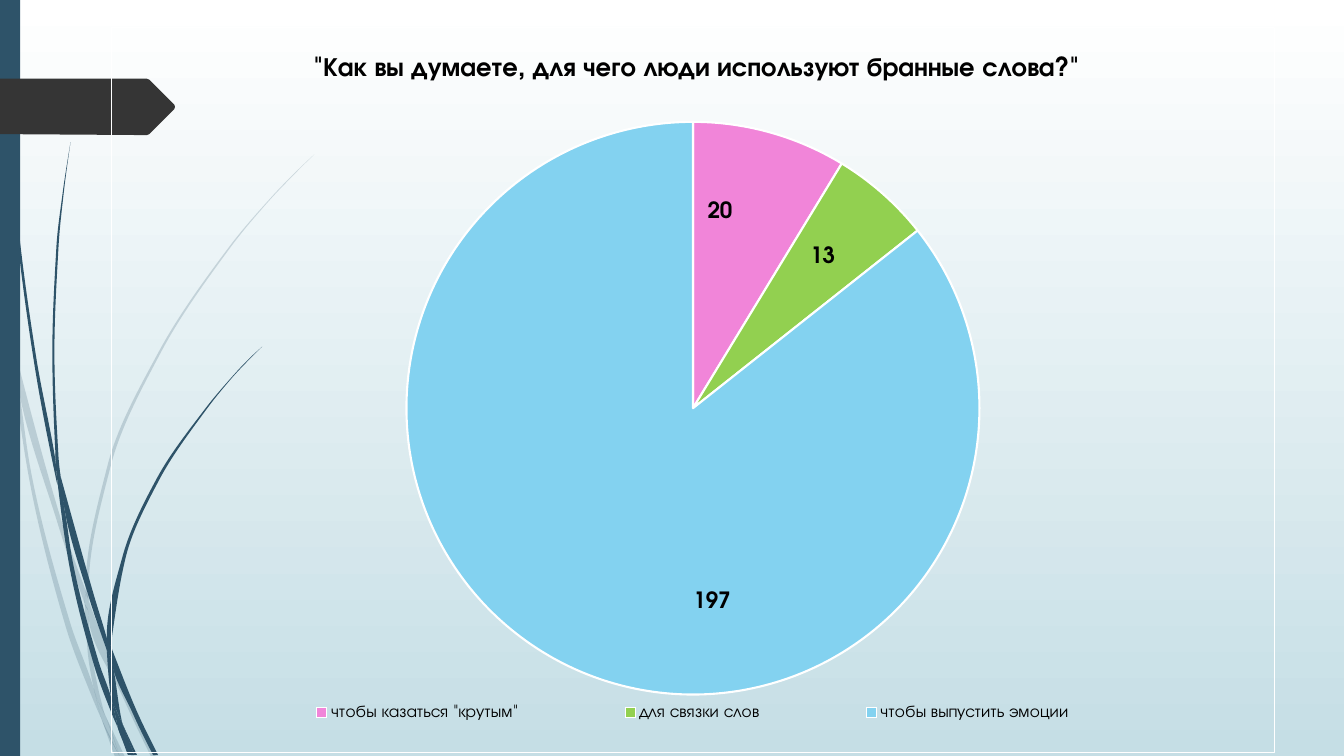
from dataclasses import dataclass
from typing import Optional

from lxml.etree import SubElement
from pptx import Presentation
from pptx.chart.data import CategoryChartData
from pptx.dml.color import RGBColor
from pptx.enum.chart import XL_CHART_TYPE, XL_LABEL_POSITION, XL_LEGEND_POSITION
from pptx.enum.shapes import MSO_SHAPE
from pptx.oxml import parse_xml
from pptx.oxml.ns import nsdecls, qn
from pptx.util import Pt

Spot = tuple[float, float]


@dataclass(frozen=True)
class Theme:
    font: str = "TeX Gyre Adventor"
    ink: str = "000000"
    white: str = "FFFFFF"
    mist: str = "C5DEE5"
    navy: str = "2E5369"
    dark: str = "353535"
    title: float = 18.8
    label: float = 16
    legend: float = 12
    base: float = 10


@dataclass(frozen=True)
class Blade:
    """A piece of grass: its right and left edges, each from top to bottom."""
    right: list[Spot]
    left: list[Spot]


@dataclass(frozen=True)
class Slice:
    name: str
    value: int
    color: str
    shift: Spot


THEME = Theme()
FADED = [
    Blade([(0, 203), (6.5, 231.8), (7.9, 252)], [(0, 215.3), (7.2, 247.7), (7.9, 252)]),
    Blade([(10.1, 248.4), (44.6, 374.4), (61.2, 421.9)],
          [(10.1, 248.4), (12.2, 270.7), (41.8, 375.8), (60.5, 431.3)]),
    Blade([(63.4, 429.1), (66.2, 437), (91.4, 498.2), (111.6, 540.7)],
          [(63.4, 429.1), (63.4, 439.2), (88.6, 499.7), (108, 540.7)]),
    Blade([(75.6, 511.9), (89.3, 540.7)], [(75.6, 511.9), (85.7, 540.7)]),
    Blade([(7.9, 252), (12.2, 270.7), (22.3, 337.7), (50.4, 445.7), (67, 491.8), (71.3, 509), (72.7, 514.1)],
          [(7.9, 252), (20.2, 338.4), (46.8, 447.1), (66.2, 499), (72.7, 514.1)]),
    Blade([(60.5, 431.3), (63.4, 437.8), (63.4, 439.2), (65.5, 465.1), (74.2, 508.3), (75.6, 511.9)],
          [(60.5, 431.3), (62.6, 465.1), (67, 491.8), (69.1, 498.2), (75.6, 511.9)]),
    Blade([(224.6, 110.2), (208.8, 126), (193, 142.6), (164.9, 176.4), (115.2, 251.3), (79.2, 332.6),
           (63.4, 420.5), (63.4, 429.1)],
          [(224.6, 110.2), (208.1, 126), (193, 141.8), (164.2, 175.7), (113.8, 250.6), (77, 331.9),
           (61.2, 420.5), (61.2, 421.9), (63.4, 429.1)]),
    Blade([(72.7, 514.1), (85.7, 540.7)], [(72.7, 514.1), (82.1, 540.7)]),
    Blade([(61.2, 421.9), (63.4, 429.1), (63.4, 439.2)],
          [(61.2, 421.9), (60.5, 431.3), (63.4, 437.8), (63.4, 439.2)]),
    Blade([(67, 491.8), (69.1, 498.2), (75.6, 511.9), (85.7, 540.7)],
          [(67, 491.8), (71.3, 509), (72.7, 514.1), (85.7, 540.7)]),
]
SOLID = [
    Blade([(2.9, 0), (3.6, 34.6), (5.8, 78.5), (13.7, 167), (25.9, 255.6), (39.2, 326.2), (39.6, 329), (41, 346.3)],
          [(2.2, 0), (2.9, 34.6), (5, 79.2), (12.2, 167.8), (23.8, 255.6), (40.3, 343.4), (41, 346.3)]),
    Blade([(43.2, 339.8), (67, 424.8), (75.9, 454.3), (76.3, 455.8), (76.3, 464.4)],
          [(43.2, 339.8), (46.1, 363.6), (63.4, 426.2), (76.3, 464.4)]),
    Blade([(79.2, 461.5), (81.4, 467.3), (97.9, 508.3), (113, 539.3)],
          [(79.2, 461.5), (79.9, 472.3), (95, 509.8), (109.4, 539.3)]),
    Blade([(41, 343.4), (46.1, 363.6), (51.8, 400.3), (70.6, 473), (79.2, 497.5), (83.5, 516.2), (84.2, 519.8)],
          [(41, 343.4), (49, 401), (67, 474.5), (79.9, 509.8), (84.2, 519.8)]),
    Blade([(50.4, 101.5), (45.4, 139), (41.8, 176.4), (38.9, 251.3), (41.8, 326.2), (43.2, 339.8)],
          [(50.4, 101.5), (44.6, 139), (40.3, 176.4), (37.4, 251.3), (39.6, 323.3), (43.2, 339.8)]),
    Blade([(87.8, 517.7), (97.9, 539.3)], [(87.8, 517.7), (95.8, 539.3)]),
    Blade([(39.6, 323.3), (43.2, 339.8), (46.1, 363.6)],
          [(39.6, 323.3), (39.6, 326.2), (41, 343.4), (46.1, 363.6)]),
    Blade([(187.2, 247.7), (176.4, 258.5), (166.3, 269.3), (147.6, 292.3), (113.8, 342.7), (90, 397.4),
           (79.9, 455.8), (79.2, 461.5)],
          [(187.2, 247.7), (176.4, 257.8), (166.3, 268.6), (146.9, 291.6), (112.3, 341.3), (87.8, 396.7),
           (76.3, 454.3), (79.2, 461.5)]),
    Blade([(84.2, 519.8), (94.3, 539.3)], [(84.2, 519.8), (91.4, 539.3)]),
    Blade([(76.3, 464.4), (78.5, 468.7), (79.9, 472.3), (87.1, 515.5), (87.8, 517.7)],
          [(76.3, 464.4), (79.2, 497.5), (83.5, 508.3), (87.8, 517.7)]),
    Blade([(76.3, 454.3), (79.2, 461.5), (79.9, 472.3)],
          [(76.3, 454.3), (76.3, 464.4), (78.5, 468.7), (79.9, 472.3)]),
    Blade([(79.2, 497.5), (83.5, 508.3), (87.8, 517.7), (95.8, 539.3)],
          [(79.2, 497.5), (83.5, 516.2), (84.2, 519.8), (93.6, 539.3)]),
]
ARROW = [(0, 56.2), (104.8, 56.2), (106.6, 56.9), (124.6, 74.9), (125, 76.3),
         (124.6, 77.8), (106.6, 95.8), (105, 96.5), (0, 95.8)]
TITLE = '"Как вы думаете, для чего люди используют бранные слова?"'
SLICES = [Slice('чтобы казаться "крутым"', 20, "F185D9", (-0.01, -0.08)),
          Slice("для связки слов", 13, "92D050", (0.03, -0.06)),
          Slice("чтобы выпустить эмоции", 197, "83D2F0", (0.07, 0.09))]


def rgb(color: str) -> RGBColor:
    return RGBColor.from_string(color)


def paint(shape, color: str, alpha: Optional[int] = None) -> None:
    shape.shadow.inherit = False
    shape.fill.solid()
    shape.fill.fore_color.rgb = rgb(color)
    shape.line.fill.background()
    if alpha is not None:
        tint = shape.fill._xPr.find(".//" + qn("a:srgbClr"))
        SubElement(tint, qn("a:alpha")).set("val", str(alpha * 1000))


def outline(slide, spots: list[Spot]):
    path = [(Pt(x), Pt(y)) for x, y in spots]
    form = slide.shapes.build_freeform(*path[0])
    form.add_line_segments(path[1:], close=True)
    return form.convert_to_shape()


def bend(edge: list[Spot]) -> list[list[Spot]]:
    """Cubic spans through an edge; slopes are harmonic means, flat at turns."""
    rates = [(b[0] - a[0]) / (b[1] - a[1]) for a, b in zip(edge, edge[1:])]
    inner = [2 * p * q / (p + q) if p * q > 0 else 0 for p, q in zip(rates, rates[1:])]
    slopes = rates * 2
    if inner:
        slopes = [1.5 * rates[0] - inner[0] / 2, *inner, 1.5 * rates[-1] - inner[-1] / 2]
    spans = []
    for (x0, y0), (x1, y1), m0, m1 in zip(edge, edge[1:], slopes, slopes[1:]):
        third = (y1 - y0) / 3
        spans.append([(x0 + third * m0, y0 + third), (x1 - third * m1, y1 - third), (x1, y1)])
    return spans


def grow(slide, blade: Blade, alpha: Optional[int] = None) -> None:
    """Draw a blade down its right edge and up its left one."""
    back = blade.left[::-1]
    joint = [] if blade.right[-1] == back[0] else [back[0]]
    shape = outline(slide, blade.right + joint + back[1:])
    lines = list(shape._element.iter(qn("a:lnTo")))
    spans = bend(blade.right) + [[spot] for spot in joint] + bend(back)
    for line, span in zip(lines, spans):
        if len(span) == 3:
            curve = parse_xml(f'<a:cubicBezTo {nsdecls("a")}/>')
            for x, y in span:
                spot = SubElement(curve, qn("a:pt"))
                spot.set("x", str(Pt(x) - shape.left))
                spot.set("y", str(Pt(y) - shape.top))
            line.getparent().replace(line, curve)
    paint(shape, THEME.navy, alpha)


def style(font, size: float, bold: bool = False) -> None:
    font.name, font.size, font.bold = THEME.font, Pt(size), bold
    font.color.rgb = rgb(THEME.ink)


def place(node, index: int, mode: str = "edge", inner: bool = False, **parts: float) -> None:
    """Give a chart part a manual layout, in fractions of the chart."""
    for old in node.findall(qn("c:layout")):
        node.remove(old)
    rows = '<c:layoutTarget val="inner"/>' if inner else ""
    rows += "".join(f'<c:{axis}Mode val="{mode}"/>' for axis in "xy")
    rows += "".join(f'<c:{key} val="{val}"/>' for key, val in parts.items())
    node.insert(index, parse_xml(
        f'<c:layout {nsdecls("c")}><c:manualLayout>{rows}</c:manualLayout></c:layout>'))


def add_pie(slide) -> None:
    data = CategoryChartData()
    data.categories = [part.name for part in SLICES]
    data.add_series("Series 1", [part.value for part in SLICES])
    chart = slide.shapes.add_chart(XL_CHART_TYPE.PIE, Pt(79), Pt(19.4), Pt(832), Pt(518.6), data).chart
    style(chart.font, THEME.base)
    space = chart._chartSpace
    space.find(qn("c:txPr")).addprevious(parse_xml(
        f'<c:spPr {nsdecls("c", "a")}><a:noFill/><a:ln w="{Pt(0.75)}"><a:solidFill>'
        f'<a:srgbClr val="{THEME.white}"/></a:solidFill></a:ln></c:spPr>'))
    chart.has_title = chart.has_legend = True
    text = chart.chart_title.text_frame
    text.text = TITLE
    style(text.paragraphs[0].runs[0].font, THEME.title, True)
    chart.legend.position = XL_LEGEND_POSITION.BOTTOM
    chart.legend.include_in_layout = False
    style(chart.legend.font, THEME.legend)
    place(space.find(".//" + qn("c:title")), 1, x=0.17, y=0.03)
    place(space.find(".//" + qn("c:legend")), 1, x=0.09, y=0.92, w=0.82, h=0.05)
    place(space.find(".//" + qn("c:plotArea")), 0, inner=True, x=0.25, y=0.13, w=0.5, h=0.79)
    plot = chart.plots[0]
    plot.vary_by_categories = True
    for i, part in enumerate(SLICES):
        point = plot.series[0].points[i]
        point.format.fill.solid()
        point.format.fill.fore_color.rgb = rgb(part.color)
        point.format.line.color.rgb = rgb(THEME.white)
        point.format.line.width = Pt(1.5)
        style(point.data_label.font, THEME.label, True)
        point.data_label.position = XL_LABEL_POSITION.CENTER
    for part, node in zip(SLICES, space.iter(qn("c:dLbl"))):
        place(node, 1, "factor", x=part.shift[0], y=part.shift[1])


def main() -> None:
    deck = Presentation()
    deck.slide_width, deck.slide_height = Pt(960), Pt(540)
    slide = deck.slides.add_slide(deck.slide_layouts[6])
    fill = slide.background.fill
    fill.gradient()
    fill.gradient_angle = 270
    for stop, color in zip(fill.gradient_stops, (THEME.white, THEME.mist)):
        stop.color.rgb = rgb(color)
    for blade in FADED:
        grow(slide, blade, 20)
    for blade in SOLID:
        grow(slide, blade)
    paint(slide.shapes.add_shape(MSO_SHAPE.RECTANGLE, 0, 0, Pt(14.4), Pt(540)), THEME.navy)
    paint(outline(slide, ARROW), THEME.dark)
    add_pie(slide)
    deck.save("out.pptx")


if __name__ == "__main__":
    main()
